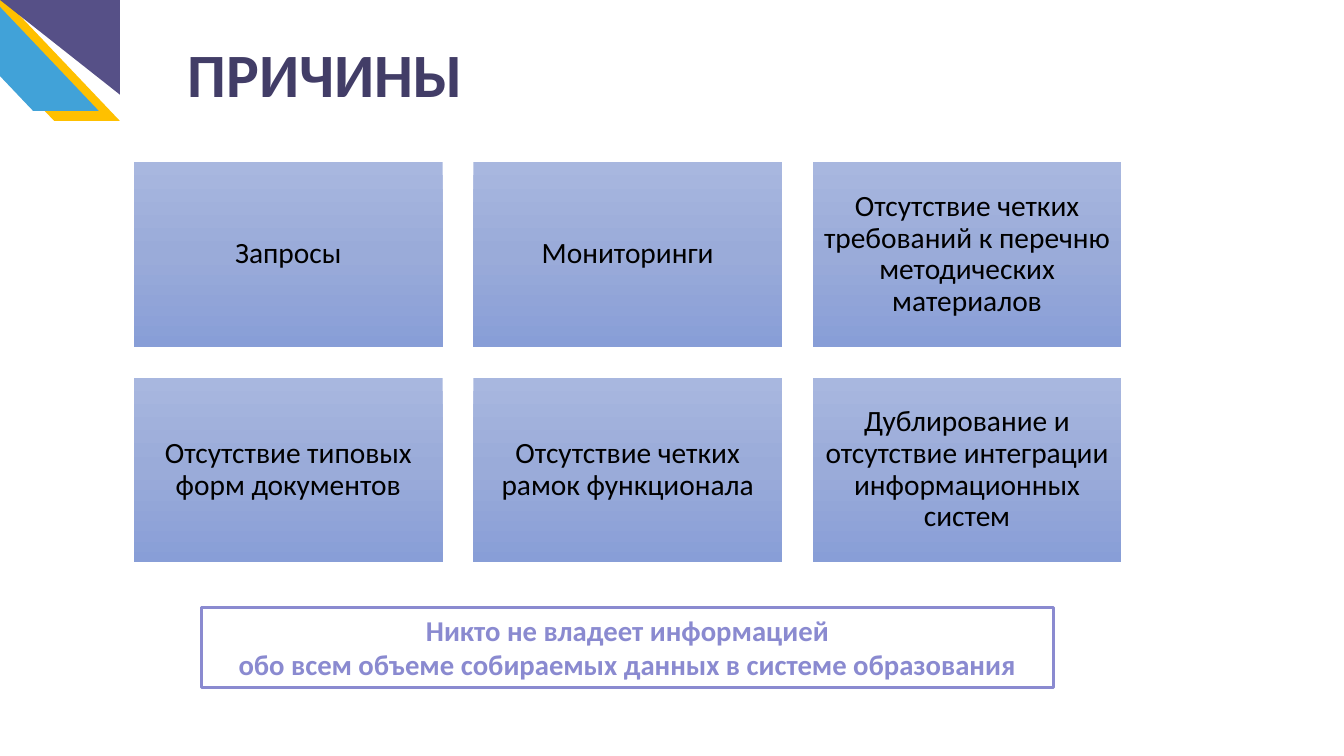
from dataclasses import dataclass

from lxml import etree
from pptx import Presentation
from pptx import util as u
from pptx.dml.color import RGBColor
from pptx.enum import shapes, text
from pptx.oxml import ns
from pptx.shapes.autoshape import Shape
from pptx.slide import Slide

YELLOW = RGBColor(0xFF, 0xC0, 0x00)
SKY = RGBColor(0x41, 0xA2, 0xD8)
PURPLE = RGBColor(0x56, 0x50, 0x87)
DARK_PURPLE = RGBColor(0x42, 0x3D, 0x67)
LAVENDER = RGBColor(0x8A, 0x8A, 0xD0)
BLACK = RGBColor(0x00, 0x00, 0x00)
CARD_STOPS = (
    (0, RGBColor(0xA8, 0xB7, 0xDF)),
    (50, RGBColor(0x9A, 0xAB, 0xD9)),
    (100, RGBColor(0x88, 0x9E, 0xD7)),
)

FONT = "Calibri"
CARD_COLUMNS = 3
CARD_LEFT, CARD_TOP = 1.33, 1.61
CARD_WIDTH, CARD_HEIGHT = 3.06, 1.83
CARD_GAP = 0.306
CARD_INSET = 0.09

REASONS = (
    "Запросы",
    "Мониторинги",
    "Отсутствие четких требований к перечню методических материалов",
    "Отсутствие типовых форм документов",
    "Отсутствие четких рамок функционала",
    "Дублирование и отсутствие интеграции информационных систем",
)
CONCLUSION = (
    "Никто не владеет информацией\n"
    "обо всем объеме собираемых данных в системе образования"
)


@dataclass(frozen=True)
class Box:
    left: float
    top: float
    width: float
    height: float


@dataclass(frozen=True)
class CornerPiece:
    kind: shapes.MSO_SHAPE
    box: Box
    color: RGBColor
    flips: tuple[str, ...]
    slant: float | None = None


CORNER = (
    CornerPiece(shapes.MSO_SHAPE.PARALLELOGRAM, Box(-0.64, -0.04, 1.83, 1.24),
                YELLOW, ("flipH",), 0.95),
    CornerPiece(shapes.MSO_SHAPE.PARALLELOGRAM, Box(-0.85, -0.14, 1.83, 1.24),
                SKY, ("flipH",), 0.95),
    CornerPiece(shapes.MSO_SHAPE.RIGHT_TRIANGLE, Box(0, 0, 1.19, 0.94),
                PURPLE, ("flipH", "flipV")),
)


def place(shape: Shape, box: Box) -> None:
    shape.left, shape.top = u.Inches(box.left), u.Inches(box.top)
    shape.width, shape.height = u.Inches(box.width), u.Inches(box.height)


def add_shape(slide: Slide, kind: shapes.MSO_SHAPE, box: Box) -> Shape:
    shape = slide.shapes.add_shape(kind, 0, 0, 0, 0)
    place(shape, box)
    shape.shadow.inherit = False
    shape.line.fill.background()
    return shape


def write(shape: Shape, content: str, *, size: float, color: RGBColor,
          bold: bool = False, align: text.PP_ALIGN = text.PP_ALIGN.CENTER,
          anchor: text.MSO_ANCHOR = text.MSO_ANCHOR.MIDDLE,
          insets: tuple[float, float, float, float] = (0.1, 0.05, 0.1, 0.05),
          line_spacing: float = 1.0, grow: bool = False) -> None:
    frame = shape.text_frame
    frame.text = content
    frame.word_wrap = True
    frame.vertical_anchor = anchor
    frame.auto_size = (text.MSO_AUTO_SIZE.SHAPE_TO_FIT_TEXT if grow
                       else text.MSO_AUTO_SIZE.NONE)
    (frame.margin_left, frame.margin_top,
     frame.margin_right, frame.margin_bottom) = map(u.Inches, insets)
    for paragraph in frame.paragraphs:
        paragraph.alignment = align
        paragraph.line_spacing = line_spacing
        paragraph.font.name = FONT
        paragraph.font.size = u.Pt(size)
        paragraph.font.bold = bold
        paragraph.font.color.rgb = color


def fill_gradient(shape: Shape, stops: tuple[tuple[int, RGBColor], ...]) -> None:
    shape.fill.gradient()
    shape.fill.gradient_angle = 270
    stop_list = shape.element.spPr.find(f".//{ns.qn('a:gsLst')}")
    for old_stop in list(stop_list):
        stop_list.remove(old_stop)
    for percent, color in stops:
        stop = etree.SubElement(stop_list, ns.qn("a:gs"), pos=str(percent * 1000))
        etree.SubElement(stop, ns.qn("a:srgbClr"), val=str(color))


def add_corner_piece(slide: Slide, piece: CornerPiece) -> None:
    shape = add_shape(slide, piece.kind, piece.box)
    shape.fill.solid()
    shape.fill.fore_color.rgb = piece.color
    if piece.slant is not None:
        shape.adjustments[0] = piece.slant
    for flip in piece.flips:
        shape.element.spPr.find(ns.qn("a:xfrm")).set(flip, "1")


def add_card(slide: Slide, index: int, reason: str) -> None:
    row, column = divmod(index, CARD_COLUMNS)
    box = Box(CARD_LEFT + column * (CARD_WIDTH + CARD_GAP),
              CARD_TOP + row * (CARD_HEIGHT + CARD_GAP),
              CARD_WIDTH, CARD_HEIGHT)
    card = add_shape(slide, shapes.MSO_SHAPE.RECTANGLE, box)
    fill_gradient(card, CARD_STOPS)
    write(card, reason, size=21, color=BLACK, line_spacing=0.9,
          insets=(CARD_INSET,) * 4)


def add_conclusion(slide: Slide) -> None:
    frame = add_shape(slide, shapes.MSO_SHAPE.RECTANGLE, Box(2, 6.03, 8.45, 0.79))
    frame.fill.background()
    frame.line.color.rgb = LAVENDER
    frame.line.width = u.Pt(2.25)
    write(frame, CONCLUSION, size=20.5, color=LAVENDER, bold=True,
          anchor=text.MSO_ANCHOR.TOP, grow=True)


def main() -> None:
    presentation = Presentation()
    presentation.slide_width = u.Inches(13.33)
    presentation.slide_height = u.Inches(7.5)
    slide = presentation.slides.add_slide(presentation.slide_layouts[5])

    for piece in CORNER:
        add_corner_piece(slide, piece)

    title = slide.shapes.title
    place(title, Box(1.86, 0.31, 7.47, 0.84))
    write(title, "ПРИЧИНЫ", size=44, color=DARK_PURPLE, bold=True,
          align=text.PP_ALIGN.LEFT, anchor=text.MSO_ANCHOR.TOP,
          insets=(0, 0.05, 0.1, 0.05), grow=True)

    for index, reason in enumerate(REASONS):
        add_card(slide, index, reason)
    add_conclusion(slide)

    presentation.save("out.pptx")


if __name__ == "__main__":
    main()
